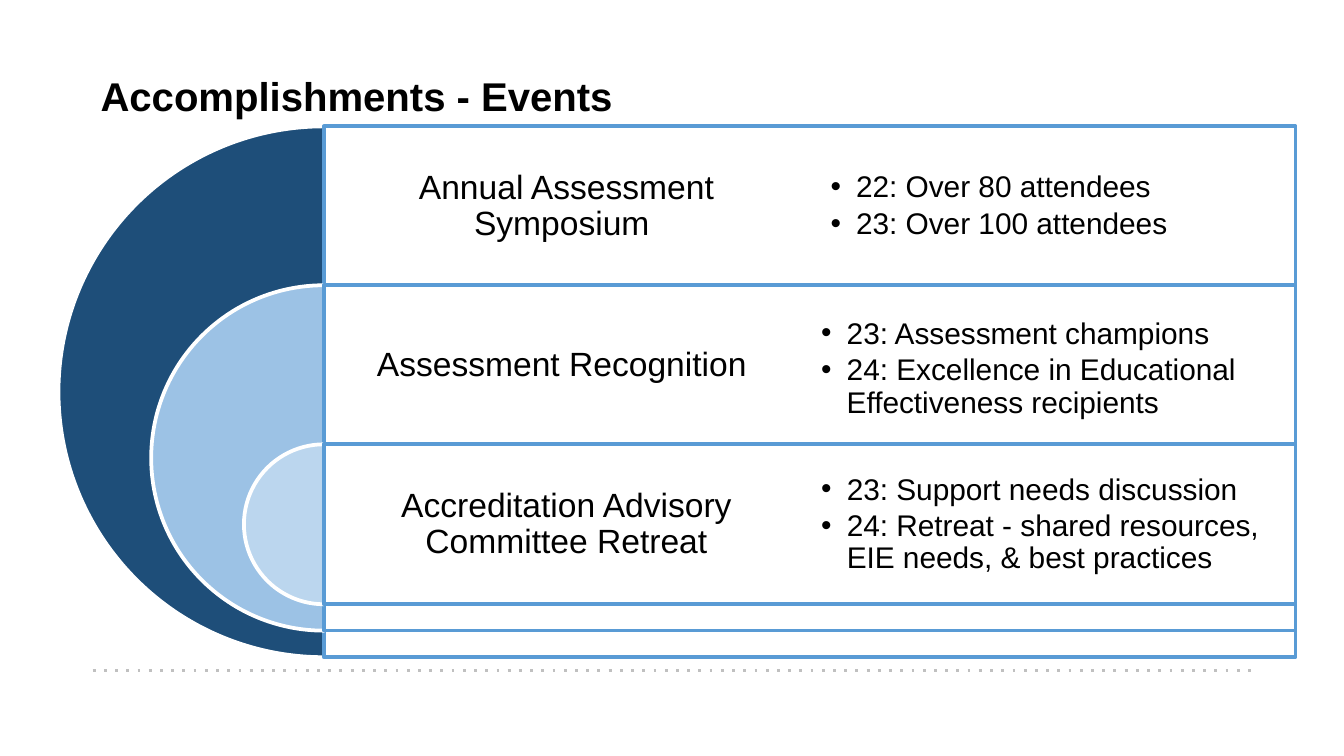
"""Build the slide of nested half circles listing event accomplishments."""
import lxml.etree
import pptx
import pptx.dml.color
import pptx.enum.dml
import pptx.enum.shapes
import pptx.enum.text
import pptx.oxml.ns
import pptx.util

Inches = pptx.util.Inches
Pt = pptx.util.Pt
Color = pptx.dml.color.RGBColor.from_string
qn = pptx.oxml.ns.qn
Align = pptx.enum.text.PP_ALIGN
Anchor = pptx.enum.text.MSO_ANCHOR
Preset = pptx.enum.shapes.MSO_SHAPE

TITLE = "Accomplishments - Events"
EVENTS = [
    {"label": "Annual Assessment Symposium ", "color": "1E4E79",
     "details": ["22: Over 80 attendees", "23: Over 100 attendees"],
     "detail_area": (5.91, 0.94, 3.84)},
    {"label": "Assessment Recognition ", "color": "9CC2E5",
     "details": ["23: Assessment champions",
                 "24: Excellence in Educational Effectiveness recipients"],
     "detail_area": (5.84, 2.15, 3.97)},
    {"label": "Accreditation Advisory Committee Retreat", "color": "BBD6EE",
     "details": ["23: Support needs discussion",
                 "24: Retreat - shared resources, EIE needs, & best practices"],
     "detail_area": (5.84, 3.31, 3.98)},
]
THEME = {
    "text": "000000", "white": "FFFFFF", "frame": "599BD5", "rule": "C0C0C0",
    "title": {"name": "Arial", "size": Pt(21.5), "bold": True},
    "label": {"name": "Arial", "size": Pt(18)},
    "detail": {"name": "Arial", "size": Pt(16)},
}
PAGE_WIDTH = 10
PAGE_HEIGHT = PAGE_WIDTH * 9 / 16
CENTER, TOP, PANEL_WIDTH, LABEL_WIDTH = 2.41, 0.94, 7.23, 3.61
OUTER, INNER = 3.95, 1.19
BAND = (OUTER - INNER) * 3 / 7
INDENT = 0.19


def apply(target, values):
    for name, value in values.items():
        setattr(target, name, value)


def add_text(page, area, texts, style, insets, align, spacing, anchor, bullets=False):
    box = page.shapes.add_textbox(*map(Inches, area))
    frame = box.text_frame
    across, down = map(Inches, insets)
    apply(frame, {"word_wrap": True, "vertical_anchor": anchor,
                  "margin_left": across, "margin_right": across,
                  "margin_top": down, "margin_bottom": down})
    for index, text in enumerate(texts):
        para = frame.add_paragraph() if index else frame.paragraphs[0]
        apply(para, {"alignment": align, "line_spacing": spacing})
        if index:
            para.space_before = Pt(2.4)
        if bullets:
            add_bullet(para)
        span = para.add_run()
        span.text = text
        apply(span.font, THEME[style])
        span.font.color.rgb = Color(THEME["text"])


def add_bullet(para):
    properties = para._p.get_or_add_pPr()
    properties.set("marL", str(Inches(INDENT)))
    properties.set("indent", str(Inches(-INDENT)))
    color = lxml.etree.SubElement(properties, qn("a:buClr"))
    lxml.etree.SubElement(color, qn("a:srgbClr"), val=THEME["text"])
    lxml.etree.SubElement(properties, qn("a:buFont"), typeface="Arial")
    lxml.etree.SubElement(properties, qn("a:buChar"), char="•")


def add_figure(page, preset, area, fill, line):
    figure = page.shapes.add_shape(preset, *map(Inches, area))
    figure.shadow.inherit = False
    figure.fill.solid()
    figure.fill.fore_color.rgb = Color(fill)
    figure.line.color.rgb = Color(line)
    figure.line.width = Pt(2)
    return figure


def add_event(page, index, event):
    top = TOP + index * BAND
    size = OUTER - index * (OUTER - INNER) / (len(EVENTS) - 1)
    half = add_figure(page, Preset.PIE, (CENTER - size / 2, top, size, size),
                      event["color"], THEME["white"])
    half.adjustments[0], half.adjustments[1] = 54, 162
    panel = add_figure(page, Preset.RECTANGLE, (CENTER, top, PANEL_WIDTH, size),
                       THEME["white"], THEME["frame"])
    color = panel._element.spPr.find(qn("a:solidFill")).find(qn("a:srgbClr"))
    lxml.etree.SubElement(color, qn("a:alpha"), val="90000")
    add_text(page, (CENTER, top, LABEL_WIDTH, INNER), [event["label"]], "label",
             (0.07, 0.07), Align.CENTER, 0.9, Anchor.MIDDLE)


def add_rule(page):
    rule = page.shapes.add_connector(pptx.enum.shapes.MSO_CONNECTOR.STRAIGHT,
                                     *map(Inches, (0.69, 4.99, 9.32, 4.99)))
    rule.line.color.rgb = Color(THEME["rule"])
    rule.line.width = Pt(1.5)
    rule.line.dash_style = pptx.enum.dml.MSO_LINE.ROUND_DOT
    properties = rule._element.spPr
    properties.find(".//" + qn("a:prstDash")).set("val", "dot")
    lxml.etree.SubElement(properties, qn("a:effectLst"))


def main():
    deck = pptx.Presentation()
    apply(deck, {"slide_width": Inches(PAGE_WIDTH), "slide_height": Inches(PAGE_HEIGHT)})
    page = deck.slides.add_slide(deck.slide_layouts[6])
    add_rule(page)
    add_text(page, (0.65, 0.55, 8.74, 0.67), [TITLE], "title",
             (0.1, 0.05), Align.LEFT, 0.8, Anchor.TOP)
    for index, event in enumerate(EVENTS):
        add_event(page, index, event)
    for event in EVENTS:
        add_text(page, (*event["detail_area"], INNER), event["details"], "detail",
                 (0.27, 0.27), Align.LEFT, 0.9, Anchor.MIDDLE, bullets=True)
    deck.save("out.pptx")


if __name__ == "__main__":
    main()
